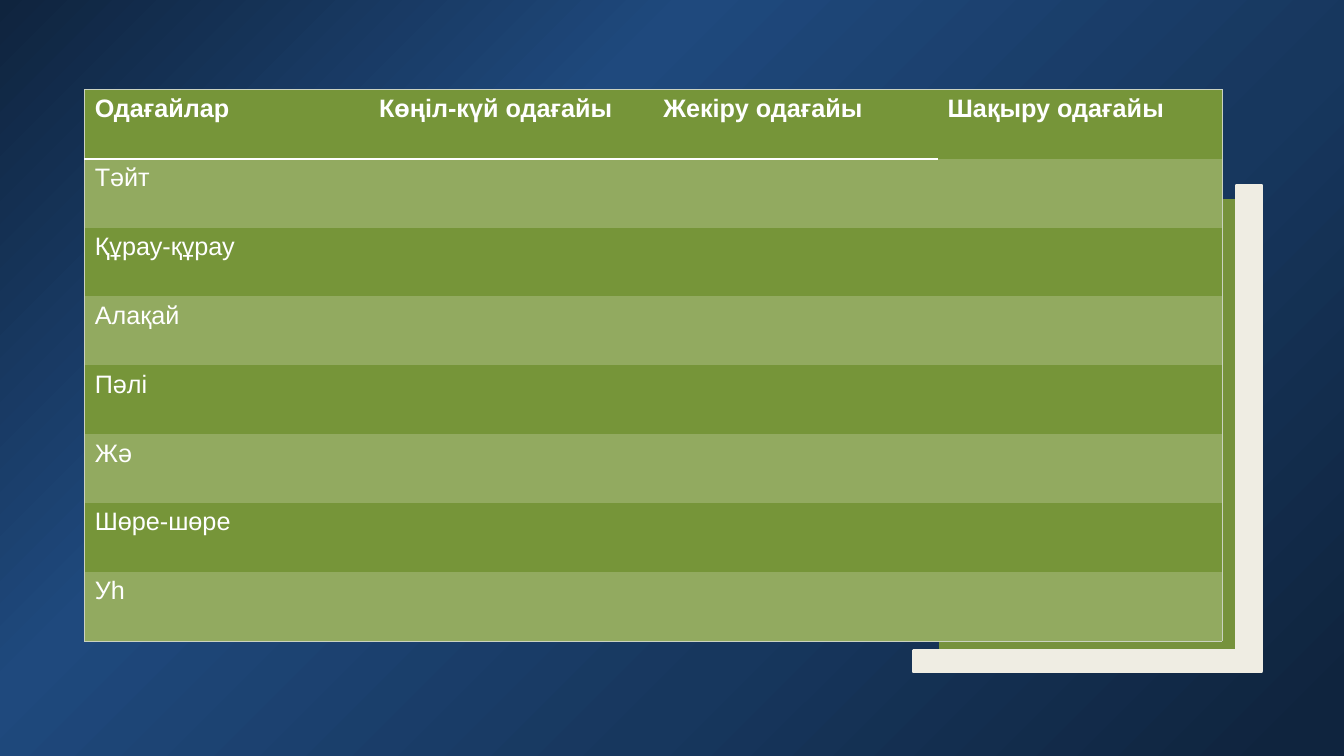
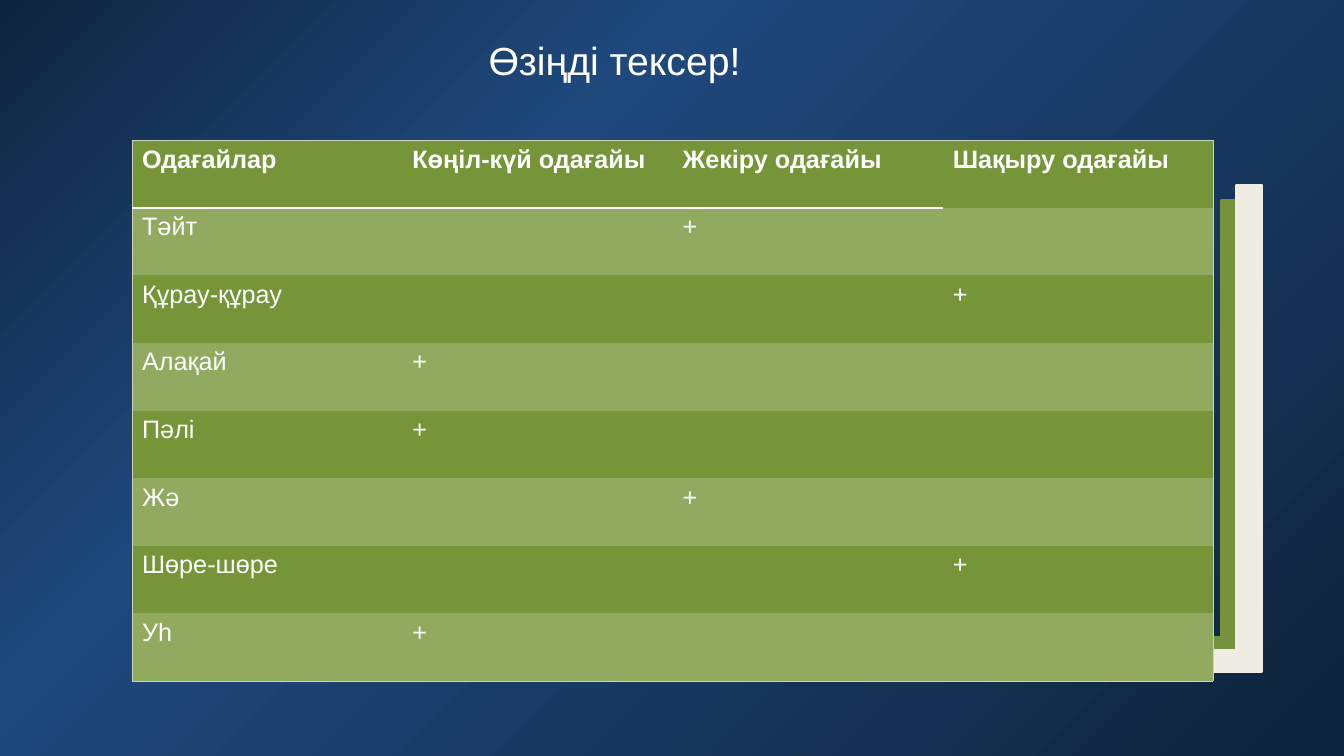
from copy import deepcopy

from lxml.etree import SubElement
from pptx import Presentation
from pptx.dml.color import RGBColor
from pptx.enum.shapes import MSO_SHAPE as Preset
from pptx.enum.text import MSO_ANCHOR as Anchor, MSO_AUTO_SIZE as AutoSize, PP_ALIGN as Align
from pptx.oxml.ns import qn
from pptx.util import Inches, Pt

FONT = "Arial"
WHITE, GREEN, CREAM = "FFFFFF", "76923C", "EFEDE3"
ROW_FILLS = ("769539", "92AA60")
OUTER_EDGE, HEADER_EDGE = ("CAD2C0", 0.5), (WHITE, 1.5)
GRADIENT = [(0, "0F243E"), (0.33, "1F497D"), (0.66, "17375E"), (0.97, "0F243E")]
CORNERS = [
    ((9.33, 1.99, 3.03, 4.55), (0.07, 0.08), GREEN),
    ((9.06, 1.84, 3.45, 4.82), (0.06, 0.07), CREAM),
]
HEADERS = ["Одағайлар", "Көңіл-күй одағайы", "Жекіру одағайы", "Шақыру одағайы"]
ANSWERS = [("Тәйт", 2), ("Құрау-құрау", 3), ("Алақай", 1), ("Пәлі", 1),
           ("Жә", 2), ("Шөре-шөре", 3), ("Уһ", 1)]
SLIDES = [
    {"title": None, "table": (0.84, 0.89, 11.28, 5.47), "answers": False},
    {"title": "Өзіңді тексер!", "table": (1.31, 1.39, 10.72, 5.37), "answers": True},
]
TITLE_BOX = (0.84, 0.25, 10.51, 0.92)
PLAIN_TABLE_STYLE = "{2D5ABB26-0587-4C30-8999-92F81FD0307C}"


def color(value):
    return RGBColor.from_string(value)


def set_font(paragraph, **format_values):
    for name, value in {"name": FONT, **format_values}.items():
        setattr(paragraph.font, name, value)
    paragraph.font.color.rgb = color(WHITE)


def set_background(master):
    fill = master.background.fill
    fill.gradient()
    fill.gradient_angle = 315
    stop_list = next(master.element.iter(qn("a:gsLst")))
    while len(stop_list) < len(GRADIENT):
        stop_list.append(deepcopy(stop_list[0]))
    for stop, (position, value) in zip(fill.gradient_stops, GRADIENT):
        stop.position = position
        stop.color.rgb = color(value)


def add_corners(slide):
    for box, adjustments, value in CORNERS:
        shape = slide.shapes.add_shape(Preset.CORNER, *map(Inches, box))
        shape.element.spPr.find(qn("a:xfrm")).set("flipH", "1")
        for index, adjustment in enumerate(adjustments):
            shape.adjustments[index] = adjustment
        shape.shadow.inherit = False
        shape.fill.solid()
        shape.fill.fore_color.rgb = color(value)
        shape.line.color.rgb = color(value)
        shape.line.width = Pt(2.75)


def add_title(slide, text):
    title = slide.shapes.title
    title.left, title.top, title.width, title.height = map(Inches, TITLE_BOX)
    frame = title.text_frame
    frame.text = text
    for name, value in {"word_wrap": True, "auto_size": AutoSize.NONE,
                        "vertical_anchor": Anchor.TOP}.items():
        setattr(frame, name, value)
    paragraph = frame.paragraphs[0]
    paragraph.alignment = Align.CENTER
    paragraph.line_spacing = 1.12
    set_font(paragraph, size=Pt(28))


def add_border(cell, side, edge):
    value, width = edge
    properties = cell._tc.get_or_add_tcPr()
    line = SubElement(properties, qn(f"a:ln{side}"), w=str(Pt(width)))
    SubElement(SubElement(line, qn("a:solidFill")), qn("a:srgbClr"), val=value)


def cell_edges(row, column, last_row, last_column):
    if column == 0:
        yield "L", OUTER_EDGE
    if column == last_column:
        yield "R", OUTER_EDGE
    if row == 0:
        yield "T", OUTER_EDGE
    if row == last_row:
        yield "B", OUTER_EDGE
    elif row == 0 and column < last_column:
        yield "B", HEADER_EDGE


def add_answer_table(slide, box, show_answers):
    rows = [HEADERS]
    for word, answer in ANSWERS:
        marks = ["+" if show_answers and column == answer else ""
                 for column in range(1, len(HEADERS))]
        rows.append([word, *marks])
    table = slide.shapes.add_table(len(rows), len(HEADERS), *map(Inches, box)).table
    table.first_row = table.horz_banding = False
    table._tbl.tblPr.find(qn("a:tableStyleId")).text = PLAIN_TABLE_STYLE
    for row, texts in enumerate(rows):
        for column, text in enumerate(texts):
            cell = table.cell(row, column)
            cell.text = text
            set_font(cell.text_frame.paragraphs[0], size=Pt(18), bold=row == 0)
            for side, edge in cell_edges(row, column, len(rows) - 1, len(texts) - 1):
                add_border(cell, side, edge)
            cell.fill.solid()
            cell.fill.fore_color.rgb = color(ROW_FILLS[row % 2])


def main():
    """Build the interjection exercise and its answer slide."""
    presentation = Presentation()
    presentation.slide_width, presentation.slide_height = Inches(13.33), Inches(7.5)
    set_background(presentation.slide_master)
    title_only, blank = presentation.slide_layouts[5], presentation.slide_layouts[6]
    for content in SLIDES:
        slide = presentation.slides.add_slide(title_only if content["title"] else blank)
        add_corners(slide)
        if content["title"]:
            add_title(slide, content["title"])
        add_answer_table(slide, content["table"], content["answers"])
    presentation.save("out.pptx")


if __name__ == "__main__":
    main()
